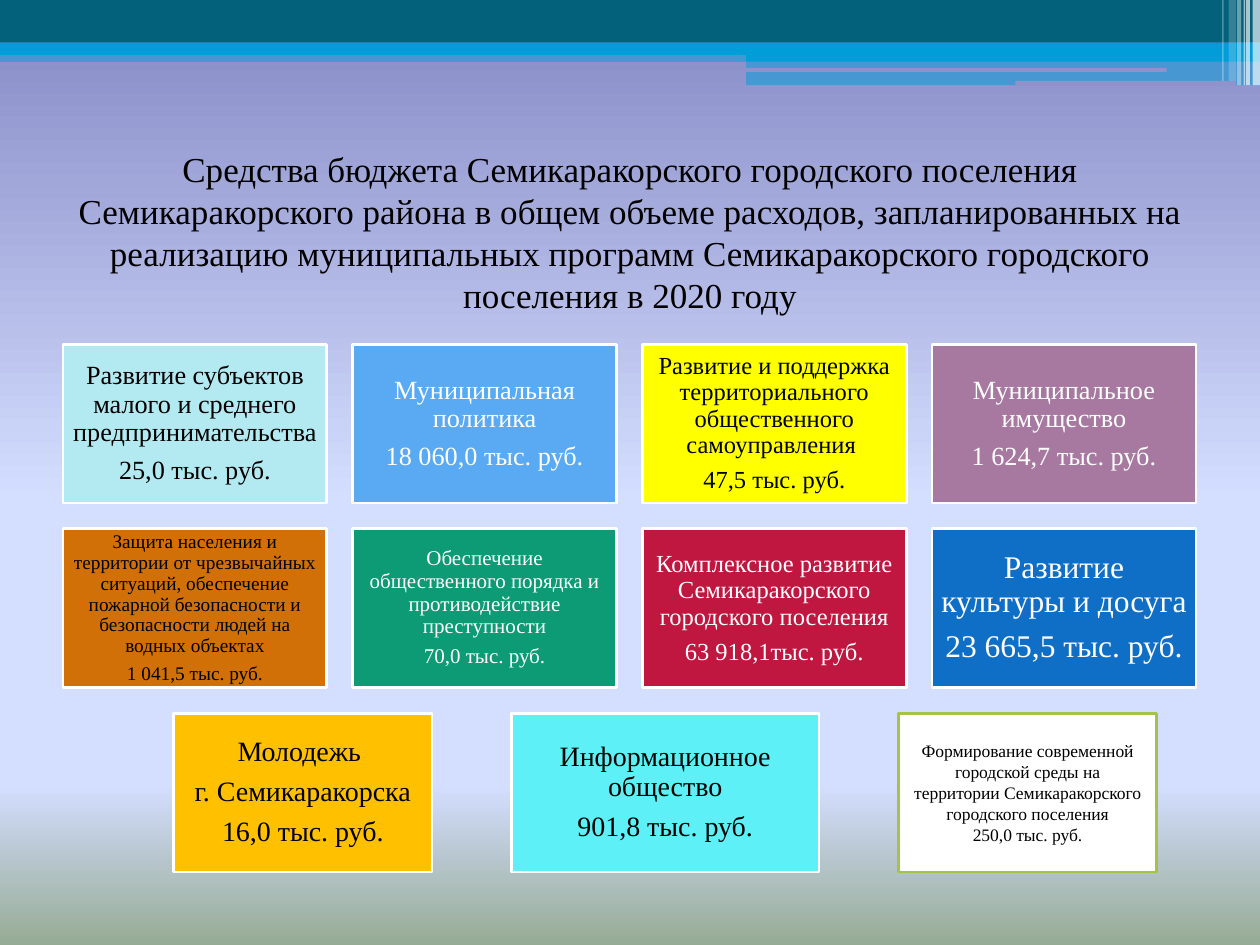
import copy
from dataclasses import dataclass

import pptx
import pptx.dml.color
import pptx.enum.shapes
import pptx.enum.text
import pptx.oxml.ns
import pptx.util
from lxml import etree

Cm = pptx.util.Cm
Pt = pptx.util.Pt
qn = pptx.oxml.ns.qn
SHAPES = pptx.enum.shapes.MSO_SHAPE
FONT = "Times New Roman"
BLACK, WHITE = "000000", "FFFFFF"
TEAL, BLUE, LAVENDER = "04617B", "009DD9", "8E93CC"


@dataclass
class Band:
    left: float
    top: float
    width: float
    height: float
    color: str
    opacity: int = 100
    rounded: bool = False


@dataclass
class Program:
    lines: list[str]
    size: int
    fill: str
    text_color: str = WHITE


@dataclass
class Frame:
    left: float
    top: float
    width: float
    height: float = 3.2


BACKGROUND_STOPS = [(0, "8488C4"), (53, "D4DEFF"), (83, "D4DEFF"), (100, "96AB94")]

BANDS = [
    Band(0, 1.02, 25.4, 0.23, BLUE, 50),
    Band(0, 0, 25.4, 0.86, TEAL),
    Band(0, 0.86, 25.4, 0.25, BLUE),
    Band(15.04, 0.99, 10.36, 0.25, BLUE),
    Band(15.04, 1.22, 10.36, 0.5, BLUE, 50),
    Band(15.01, 1.37, 8.51, 0.08, LAVENDER, rounded=True),
    Band(20.47, 1.63, 4.45, 0.1, LAVENDER, rounded=True),
    Band(25.25, 0, 0.15, 1.72, WHITE, 65),
    Band(25.12, 0, 0.08, 1.72, WHITE, 65),
    Band(25.07, 0, 0.03, 1.72, WHITE, 60),
    Band(24.94, 0, 0.08, 1.72, WHITE, 40),
    Band(24.77, 0, 0.15, 1.63, WHITE, 20),
    Band(24.64, 0, 0.03, 1.63, WHITE, 30),
]

TITLE = (
    "Средства бюджета Семикаракорского городского поселения Семикаракорского района "
    "в общем объеме расходов, запланированных на реализацию муниципальных программ "
    "Семикаракорского городского поселения в 2020 году"
)

GRID_PROGRAMS = [
    Program(["Развитие субъектов малого и среднего предпринимательства", "25,0 тыс. руб."],
            15, "B3EAF2", BLACK),
    Program(["Муниципальная политика", "18 060,0 тыс. руб."], 15, "59AAF2"),
    Program(["Развитие и поддержка территориального общественного самоуправления ",
             "47,5 тыс. руб."], 14, "FFFF00", BLACK),
    Program(["Муниципальное имущество", "1 624,7 тыс. руб."], 15, "A779A0"),
    Program(["Защита населения и территории от чрезвычайных ситуаций, обеспечение пожарной "
             "безопасности и безопасности людей на водных объектах", "1 041,5 тыс. руб."],
            11, "D07006", BLACK),
    Program(["Обеспечение общественного порядка и противодействие преступности",
             "70,0 тыс. руб."], 12, "0C9B74"),
    Program(["Комплексное развитие Семикаракорского городского поселения",
             "63 918,1тыс. руб."], 14, "BF173F"),
    Program(["Развитие культуры и досуга", "23 665,5 тыс. руб."], 18, "0F6FC6"),
]
YOUTH = Program(["Молодежь ", "г. Семикаракорска", "16,0 тыс. руб."], 16, "FFC000", BLACK)
INFORMATION = Program(["Информационное общество", "901,8 тыс. руб."], 16, "5EF0F7", BLACK)
ENVIRONMENT = Program(["Формирование современной городской среды на территории "
                       "Семикаракорского городского поселения", "250,0 тыс. руб."],
                      10, WHITE, BLACK)

COLUMNS = 4
GRID_LEFT, GRID_TOP = 1.27, 6.94
COLUMN_STEP, ROW_STEP = 5.84, 3.72
CELL_WIDTH = 5.32
LAST_TOP = GRID_TOP + 2 * ROW_STEP


def rgb(color: str) -> pptx.dml.color.RGBColor:
    return pptx.dml.color.RGBColor.from_string(color)


def set_background(slide) -> None:
    fill = slide.background.fill
    fill.gradient()
    fill.gradient_angle = 270
    stop_list = next(slide.element.iter(qn("a:gsLst")))
    template = copy.deepcopy(stop_list[0])
    for stop in list(stop_list):
        stop_list.remove(stop)
    for _ in BACKGROUND_STOPS:
        stop_list.append(copy.deepcopy(template))
    for stop, (position, color) in zip(fill.gradient_stops, BACKGROUND_STOPS):
        stop.position = position / 100
        stop.color.rgb = rgb(color)


def draw_band(slide, band: Band) -> None:
    kind = SHAPES.ROUNDED_RECTANGLE if band.rounded else SHAPES.RECTANGLE
    shape = slide.shapes.add_shape(
        kind, Cm(band.left), Cm(band.top), Cm(band.width), Cm(band.height))
    shape.shadow.inherit = False
    shape.fill.solid()
    shape.fill.fore_color.rgb = rgb(band.color)
    shape.line.fill.background()
    if band.opacity < 100:
        color = next(shape.element.spPr.iter(qn("a:srgbClr")))
        etree.SubElement(color, qn("a:alpha")).set("val", str(band.opacity * 1000))


def format_paragraph(paragraph, size: int, color: str) -> None:
    paragraph.alignment = pptx.enum.text.PP_ALIGN.CENTER
    paragraph.font.name = FONT
    paragraph.font.size = Pt(size)
    paragraph.font.color.rgb = rgb(color)


def draw_program(slide, program: Program, frame: Frame, line: str = WHITE,
                 inset: float = 0.16, spacing: float = 0.9, gap: float = 0.35) -> None:
    shape = slide.shapes.add_shape(
        SHAPES.RECTANGLE, Cm(frame.left), Cm(frame.top), Cm(frame.width), Cm(frame.height))
    shape.shadow.inherit = False
    shape.fill.solid()
    shape.fill.fore_color.rgb = rgb(program.fill)
    shape.line.color.rgb = rgb(line)
    shape.line.width = Pt(1.5)
    text_frame = shape.text_frame
    text_frame.word_wrap = True
    text_frame.vertical_anchor = pptx.enum.text.MSO_ANCHOR.MIDDLE
    text_frame.margin_left = text_frame.margin_right = Cm(inset)
    text_frame.margin_top = text_frame.margin_bottom = Cm(0.13)
    text_frame.text = "\n".join(program.lines)
    for paragraph in text_frame.paragraphs:
        format_paragraph(paragraph, program.size, program.text_color)
        paragraph.line_spacing = spacing
        paragraph.space_after = Pt(program.size * gap)


def set_title(slide) -> None:
    title = slide.shapes.title
    title.left, title.top, title.width, title.height = Cm(1.27), Cm(3.18), Cm(22.86), Cm(2.97)
    title.text_frame.text = TITLE
    title.text_frame.word_wrap = True
    title.text_frame.auto_size = pptx.enum.text.MSO_AUTO_SIZE.NONE
    title.text_frame.vertical_anchor = pptx.enum.text.MSO_ANCHOR.MIDDLE
    format_paragraph(title.text_frame.paragraphs[0], 20, BLACK)


def main() -> None:
    presentation = pptx.Presentation()
    presentation.slide_width, presentation.slide_height = Cm(25.4), Cm(19.05)
    slide = presentation.slides.add_slide(presentation.slide_layouts[5])
    set_background(slide)
    for band in BANDS:
        draw_band(slide, band)
    set_title(slide)
    for index, program in enumerate(GRID_PROGRAMS):
        row, column = divmod(index, COLUMNS)
        draw_program(slide, program, Frame(
            GRID_LEFT + column * COLUMN_STEP, GRID_TOP + row * ROW_STEP, CELL_WIDTH))
    draw_program(slide, YOUTH, Frame(3.5, LAST_TOP, 5.21))
    draw_program(slide, INFORMATION, Frame(10.31, LAST_TOP, 6.2))
    draw_program(slide, ENVIRONMENT, Frame(18.11, LAST_TOP, 5.21),
                 line="A5C249", inset=0.25, spacing=1.0, gap=0)
    presentation.save("out.pptx")


if __name__ == "__main__":
    main()
